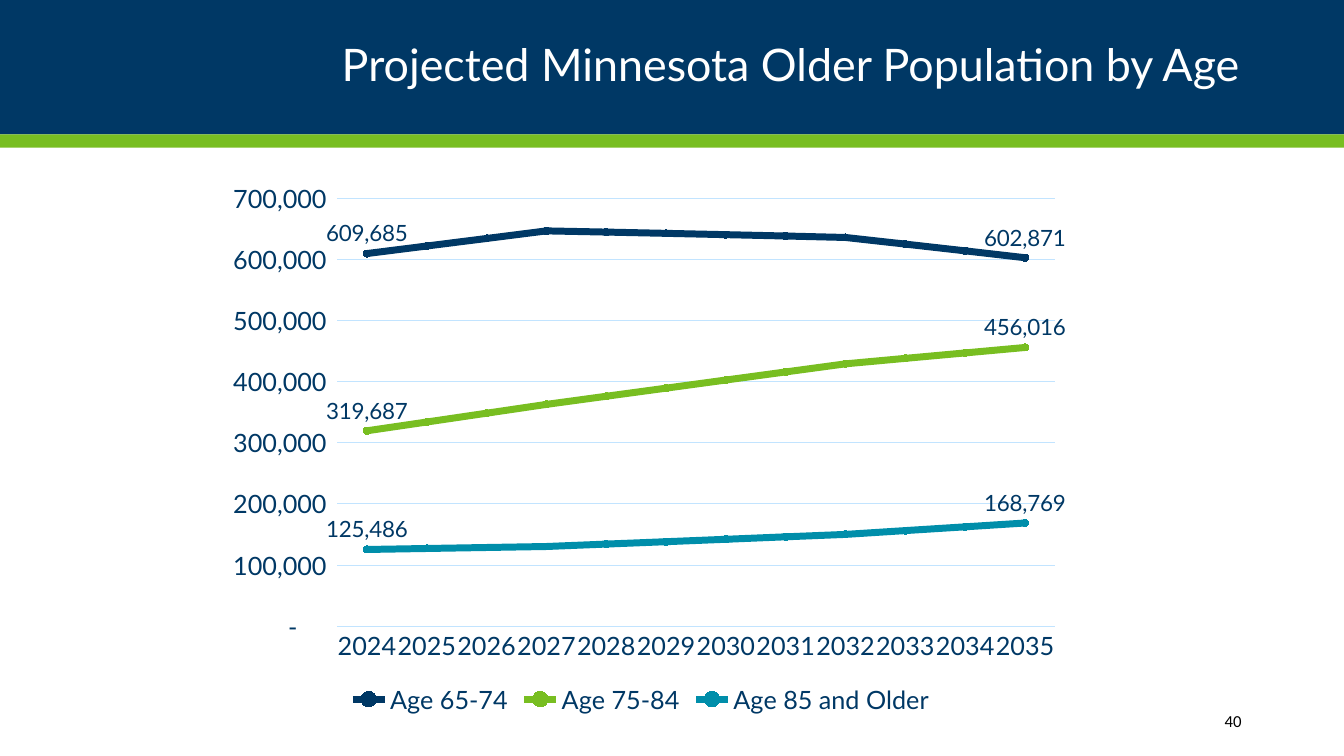
from dataclasses import dataclass

from pptx import Presentation
from pptx.chart.data import CategoryChartData
from pptx.dml.color import RGBColor
from pptx.enum.chart import (XL_CHART_TYPE, XL_LABEL_POSITION,
                             XL_LEGEND_POSITION, XL_MARKER_STYLE, XL_TICK_MARK)
from pptx.enum.shapes import MSO_SHAPE
from pptx.enum.text import MSO_ANCHOR, PP_ALIGN
from pptx.util import Cm, Pt

RECT = MSO_SHAPE.RECTANGLE
LINE_MARKERS = XL_CHART_TYPE.LINE_MARKERS
ABOVE = XL_LABEL_POSITION.ABOVE
BOTTOM = XL_LEGEND_POSITION.BOTTOM
CIRCLE = XL_MARKER_STYLE.CIRCLE
NO_TICK = XL_TICK_MARK.NONE
MIDDLE = MSO_ANCHOR.MIDDLE
RIGHT = PP_ALIGN.RIGHT


@dataclass(frozen=True)
class Theme:
    navy: RGBColor = RGBColor(0x00, 0x38, 0x65)
    green: RGBColor = RGBColor(0x78, 0xBE, 0x21)
    teal: RGBColor = RGBColor(0x00, 0x8E, 0xAA)
    grid: RGBColor = RGBColor(0xC2, 0xE4, 0xFF)
    white: RGBColor = RGBColor(0xFF, 0xFF, 0xFF)
    black: RGBColor = RGBColor(0x00, 0x00, 0x00)
    font: str = "Lato"
    number_font: str = "Calibri"
    title_size: int = 32
    axis_size: int = 18
    label_size: int = 16
    page_size: int = 12


THEME = Theme()


@dataclass(frozen=True)
class Box:
    left: float
    top: float
    width: float
    height: float

    def place(self) -> tuple:
        return Cm(self.left), Cm(self.top), Cm(self.width), Cm(self.height)


@dataclass(frozen=True)
class Band:
    box: Box
    color: RGBColor


@dataclass(frozen=True)
class Label:
    text: str
    box: Box
    font: str
    size: int
    color: RGBColor
    side_inset: float
    line_spacing: float


@dataclass(frozen=True)
class AgeGroup:
    name: str
    color: RGBColor
    people: tuple


SLIDE_W, SLIDE_H = 33.87, 19.05
HEADER_H = 3.39
CHART_BOX = Box(5.28, 4.34, 21.74, 13.79)
NUMBER_FORMAT = '_(* #,##0_);_(* \\(#,##0\\);_(* "-"??_);_(@_)'
YEARS = range(2024, 2036)

BANDS = (
    Band(Box(0, 0, SLIDE_W, HEADER_H), THEME.navy),
    Band(Box(0, HEADER_H, SLIDE_W, 0.33), THEME.green),
)
LABELS = (
    Label("Projected Minnesota Older Population by Age ",
          Box(2.33, 0, 29.21, HEADER_H),
          THEME.font, THEME.title_size, THEME.white, 0, 0.9),
    Label("40", Box(27.48, 17.65, 4.06, 1.02),
          THEME.number_font, THEME.page_size, THEME.black, 0.25, 1.0),
)
AGE_GROUPS = (
    AgeGroup("Age 65-74", THEME.navy,
             (609685, 622006, 634356, 646724, 644780, 642731,
              640585, 638325, 635947, 625109, 614075, 602871)),
    AgeGroup("Age 75-84", THEME.green,
             (319687, 334030, 348448, 362904, 376168, 389433,
              402727, 416007, 429258, 438195, 447103, 456016)),
    AgeGroup("Age 85 and Older", THEME.teal,
             (125486, 127107, 128723, 130347, 134269, 138216,
              142170, 146174, 150161, 156368, 162562, 168769)),
)


def set_font(font, name: str, size: int, color: RGBColor) -> None:
    font.name = name
    font.size = Pt(size)
    font.color.rgb = color


def set_line(line, color: RGBColor, width: float) -> None:
    line.color.rgb = color
    line.width = Pt(width)


def add_band(slide, band: Band) -> None:
    s = slide.shapes.add_shape(RECT, *band.box.place())
    s.shadow.inherit = False
    s.fill.solid()
    s.fill.fore_color.rgb = band.color
    s.line.fill.background()


def add_label(slide, label: Label) -> None:
    tf = slide.shapes.add_textbox(*label.box.place()).text_frame
    tf.word_wrap = True
    tf.vertical_anchor = MIDDLE
    tf.margin_left = tf.margin_right = Cm(label.side_inset)
    tf.text = label.text
    p = tf.paragraphs[0]
    p.alignment = RIGHT
    p.line_spacing = label.line_spacing
    set_font(p.runs[0].font, label.font, label.size, label.color)


def style_axes(chart) -> None:
    years, people = chart.category_axis, chart.value_axis
    for axis in (years, people):
        axis.major_tick_mark = axis.minor_tick_mark = NO_TICK
        set_font(axis.tick_labels.font, THEME.font, THEME.axis_size, THEME.navy)
    set_line(years.format.line, THEME.grid, 0.75)
    years._element.txPr.bodyPr.set("rot", "-60000000")
    people.format.line.fill.background()
    people.minimum_scale, people.maximum_scale = 0, 700000
    people.major_unit = 100000
    set_line(people.major_gridlines.format.line, THEME.grid, 0.75)
    people.tick_labels.number_format = NUMBER_FORMAT
    people.tick_labels.number_format_is_linked = False


def style_series(series, color: RGBColor) -> None:
    """Colour one line and label its first and last points."""
    series.smooth = False
    set_line(series.format.line, color, 5)
    marker = series.marker
    marker.style = CIRCLE
    marker.size = 5
    marker.format.fill.solid()
    marker.format.fill.fore_color.rgb = color
    marker.format.line.color.rgb = color
    for index in (0, len(YEARS) - 1):
        label = series.points[index].data_label
        set_font(label.font, THEME.font, THEME.label_size, THEME.navy)
        label.position = ABOVE


def add_population_chart(slide) -> None:
    data = CategoryChartData(number_format="#,##0")
    data.categories = [str(year) for year in YEARS]
    for group in AGE_GROUPS:
        data.add_series(group.name, group.people)
    chart = slide.shapes.add_chart(LINE_MARKERS, *CHART_BOX.place(), data).chart
    chart.has_title = False
    set_font(chart.font, THEME.font, THEME.axis_size, THEME.navy)
    chart.has_legend = True
    chart.legend.position = BOTTOM
    chart.legend.include_in_layout = False
    set_font(chart.legend.font, THEME.font, THEME.axis_size, THEME.navy)
    chart.plots[0].vary_by_categories = False
    style_axes(chart)
    for series, group in zip(chart.plots[0].series, AGE_GROUPS):
        style_series(series, group.color)


def main() -> None:
    prs = Presentation()
    prs.slide_width, prs.slide_height = Cm(SLIDE_W), Cm(SLIDE_H)
    slide = prs.slides.add_slide(prs.slide_layouts[6])
    for band in BANDS:
        add_band(slide, band)
    for label in LABELS:
        add_label(slide, label)
    add_population_chart(slide)
    prs.save("out.pptx")


if __name__ == "__main__":
    main()
